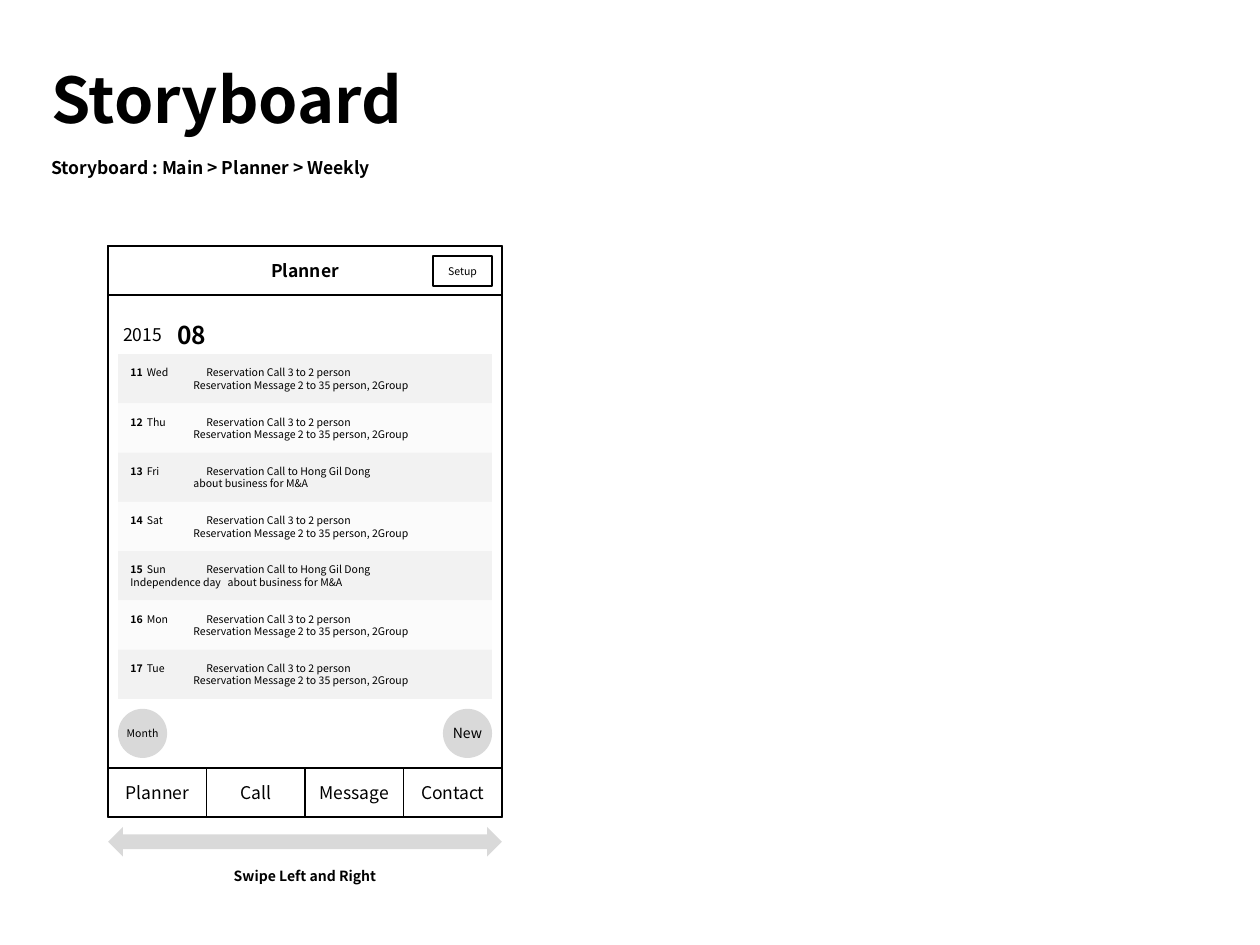
import pptx
import pptx.dml.color
import pptx.enum.shapes
import pptx.enum.text
import pptx.oxml.ns
import pptx.util
from lxml import etree

Cm = pptx.util.Cm
Pt = pptx.util.Pt
RGB = pptx.dml.color.RGBColor
Kind = pptx.enum.shapes.MSO_SHAPE
Align = pptx.enum.text.PP_ALIGN
Anchor = pptx.enum.text.MSO_ANCHOR

FONT = "Noto Sans CJK KR"
BLACK = RGB(0x00, 0x00, 0x00)
GREY = RGB(0xD9, 0xD9, 0xD9)
BANDS = RGB(0xF2, 0xF2, 0xF2), RGB(0xFB, 0xFB, 0xFB)

# Phone frame and its inner column, in centimetres
LEFT, TOP, WIDE, HIGH = 2.18, 4.96, 7.94, 11.51
BAR = 0.99
INNER, SPAN = 2.38, 7.54
FIRST, LIST = 7.14, 6.95
DAY_STOPS, NOTE_STOPS = (0.33, 1.53), (1.27, 1.96)

CALL = "Reservation Call 3 to 2 person"
GROUP = "\tReservation Message 2 to 35 person, 2Group"
MEET = "Reservation Call to Hong Gil Dong"
TOPIC = "\tabout business for M&A"
DAYS = [
    ("11", "Wed", CALL, GROUP),
    ("12", "Thu", CALL, GROUP),
    ("13", "Fri", MEET, TOPIC),
    ("14", "Sat", CALL, GROUP),
    ("15", "Sun", MEET, "Independence day" + TOPIC),
    ("16", "Mon", CALL, GROUP),
    ("17", "Tue", CALL, GROUP),
]
TABS = ["Planner", "Call", "Message", "Contact"]


def write(para, text, size=10, bold=False, align=None):
    """Append a formatted run to a paragraph."""
    run = para.add_run()
    run.text = text
    font = run.font
    font.name, font.size, font.bold = FONT, Pt(size), bold
    font.color.rgb = BLACK
    if align is not None:
        para.alignment = align


def set_stops(para, stops):
    """Give a paragraph left tab stops, in centimetres."""
    tabs = etree.SubElement(para._p.get_or_add_pPr(), pptx.oxml.ns.qn("a:tabLst"))
    for stop in stops:
        tab = etree.SubElement(tabs, pptx.oxml.ns.qn("a:tab"))
        tab.set("pos", str(int(Cm(stop))))
        tab.set("algn", "l")


class Board:
    def __init__(self, slide):
        self.slide = slide

    def frame(self, shape, inset):
        frame = shape.text_frame
        frame.word_wrap = True
        frame.vertical_anchor = Anchor.MIDDLE
        frame.margin_left = frame.margin_right = Cm(inset)
        frame.margin_top = frame.margin_bottom = 0
        return frame

    def label(self, box, text, inset=0, **form):
        shape = self.slide.shapes.add_textbox(*map(Cm, box))
        write(self.frame(shape, inset).paragraphs[0], text, **form)

    def shape(self, box, text="", kind=Kind.RECTANGLE, fill=None, **form):
        """Add a filled shape, or an outlined one when no fill is given."""
        shape = self.slide.shapes.add_shape(kind, *map(Cm, box))
        shape.shadow.inherit = False
        if fill is None:
            shape.fill.background()
            shape.line.color.rgb = BLACK
            shape.line.width = Pt(1)
        else:
            shape.fill.solid()
            shape.fill.fore_color.rgb = fill
            shape.line.fill.background()
        if text:
            para = self.frame(shape, 0).paragraphs[0]
            write(para, text, align=Align.CENTER, **form)
        return shape

    def day(self, box, fill, date, name, event, note):
        frame = self.frame(self.shape(box, fill=fill), 0.25)
        head, tail = frame.paragraphs[0], frame.add_paragraph()
        write(head, date, size=6, bold=True, align=Align.LEFT)
        write(head, f"\t{name}\t{event}", size=6)
        write(tail, note, size=6, align=Align.LEFT)
        set_stops(head, DAY_STOPS)
        set_stops(tail, NOTE_STOPS)


def main():
    deck = pptx.Presentation()
    deck.slide_width, deck.slide_height = Cm(25.4), Cm(19.05)
    board = Board(deck.slides.add_slide(deck.slide_layouts[6]))

    board.label((0.79, 0.79, 18.47, 2.38), "Storyboard", inset=0.25, size=36, bold=True)
    board.label((0.79, 2.98, 18.47, 0.79), "Storyboard : Main > Planner > Weekly",
                inset=0.25, bold=True)

    board.shape((LEFT, TOP, WIDE, HIGH))
    board.shape((LEFT, TOP, WIDE, BAR), "Planner", bold=True)
    board.shape((8.73, 5.16, 1.19, 0.6), "Setup", size=6)

    board.label((INNER, 6.35, BAR, 0.79), "2015", align=Align.CENTER)
    board.label((3.57, 6.35, 0.79, 0.79), "08", size=14, bold=True)

    step = LIST / len(DAYS)
    for i, day in enumerate(DAYS):
        board.day((INNER, FIRST + i * step, SPAN, step), BANDS[i % 2], *day)

    right = INNER + SPAN - BAR
    for x, text, size in ((INNER, "Month", 6), (right, "New", 8)):
        board.shape((x, 14.29, BAR, BAR), text, kind=Kind.OVAL, fill=GREY, size=size)

    wide = WIDE / len(TABS)
    for i, text in enumerate(TABS):
        board.shape((LEFT + i * wide, TOP + HIGH - BAR, wide, BAR), text)

    board.shape((LEFT, 16.67, WIDE, 0.6), kind=Kind.LEFT_RIGHT_ARROW, fill=GREY)
    board.label((LEFT + wide, 17.26, 2 * wide, 0.79), "Swipe Left and Right",
                size=8, bold=True, align=Align.CENTER)

    deck.save("out.pptx")


if __name__ == "__main__":
    main()
